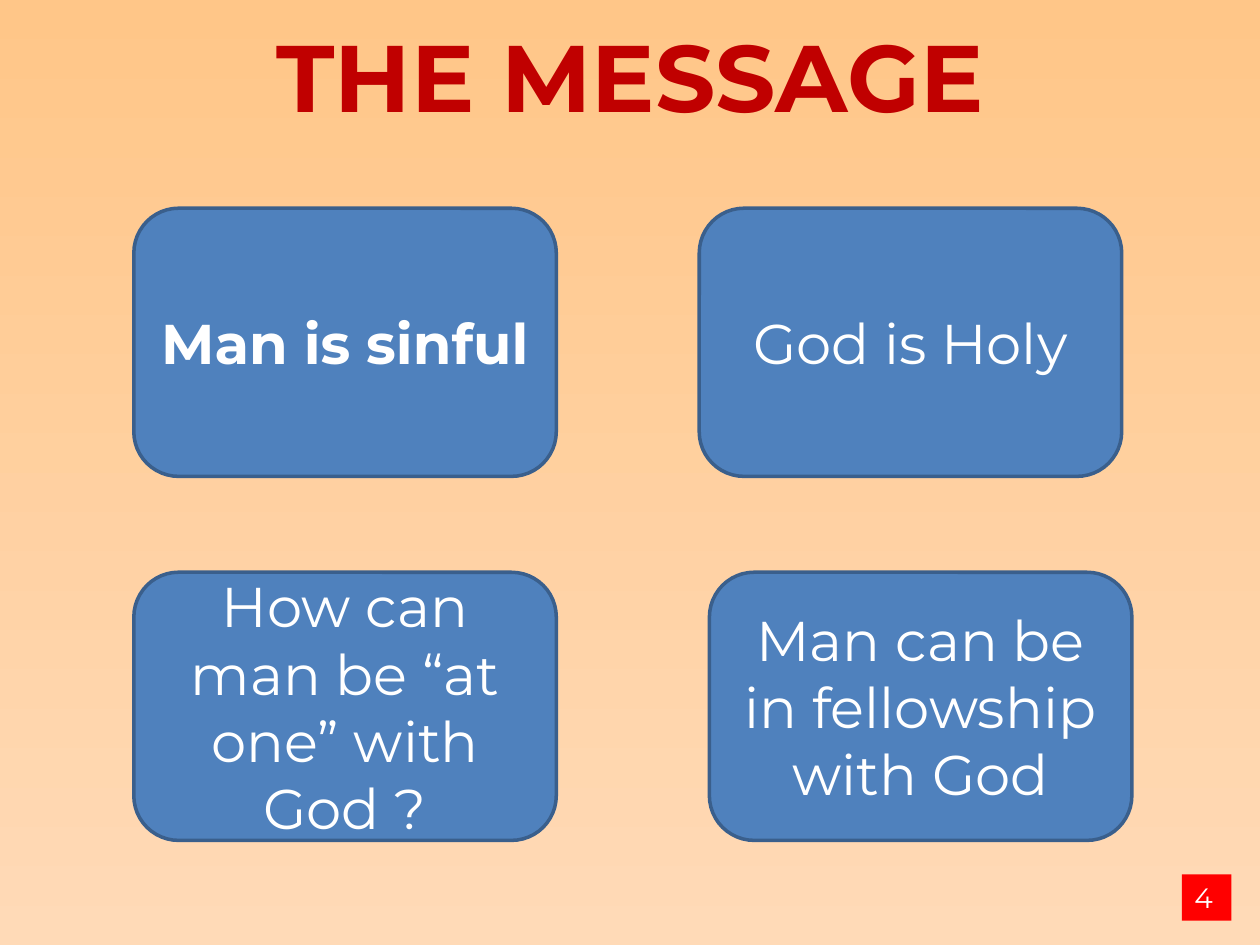
import pptx
import pptx.dml.color
import pptx.enum.shapes
import pptx.enum.text
import pptx.util

Pt = pptx.util.Pt
SHAPE = pptx.enum.shapes.MSO_SHAPE
ALIGN = pptx.enum.text.PP_ALIGN
ANCHOR = pptx.enum.text.MSO_ANCHOR

COLOURS = {
    "sky": "FFC688",
    "ground": "FFDAB7",
    "heading": "C00000",
    "card": "4F81BD",
    "card edge": "3A5F8C",
    "badge": "FF0000",
    "light": "FFFFFF",
}


class MessageSlide:
    font = "Montserrat"

    def __init__(self, slide):
        self.slide = slide

    def colour(self, name):
        return pptx.dml.color.RGBColor.from_string(COLOURS[name])

    def background(self, top, bottom):
        fill = self.slide.background.fill
        fill.gradient()
        fill.gradient_angle = 270
        for stop, name, position in zip(fill.gradient_stops, (top, bottom), (0, 1)):
            stop.color.rgb = self.colour(name)
            stop.position = position

    def add_words(self, holder, words, size, colour, bold=False,
                  align=ALIGN.CENTER, anchor=ANCHOR.MIDDLE):
        frame = holder.text_frame
        frame.word_wrap = True
        frame.vertical_anchor = anchor
        frame.text = words
        paragraph = frame.paragraphs[0]
        paragraph.alignment = align
        font = paragraph.runs[0].font
        font.name, font.size, font.bold = self.font, Pt(size), bold
        font.color.rgb = self.colour(colour)

    def title(self, words, box):
        heading = self.slide.shapes.add_textbox(*map(Pt, box))
        self.add_words(heading, words, 54, "heading", bold=True)

    def panel(self, kind, box, fill):
        panel = self.slide.shapes.add_shape(kind, *map(Pt, box))
        panel.shadow.inherit = False
        panel.fill.solid()
        panel.fill.fore_color.rgb = self.colour(fill)
        return panel

    def card(self, words, box, bold=False):
        card = self.panel(SHAPE.ROUNDED_RECTANGLE, box, "card")
        card.line.color.rgb = self.colour("card edge")
        card.line.width = Pt(2)
        self.add_words(card, words, 32, "light", bold)

    def page_badge(self, number, box):
        badge = self.panel(SHAPE.RECTANGLE, box, "badge")
        badge.line.fill.background()
        self.add_words(badge, number, 16, "light", align=ALIGN.LEFT, anchor=ANCHOR.TOP)


def main():
    deck = pptx.Presentation()
    deck.slide_width, deck.slide_height = Pt(720), Pt(540)
    message = MessageSlide(deck.slides.add_slide(deck.slide_layouts[6]))

    # Background, title and page number
    message.background("sky", "ground")
    message.title("THE MESSAGE", (0, 9.5, 720, 66))
    message.page_badge("4", (675.4, 499.6, 28.2, 26.6))

    # Four statements
    card_width, card_height = 241.4, 153.2
    upper, lower = 119, 327
    statements = [
        ("Man is sinful", 76.5, upper, True),
        ("God is Holy", 399.6, upper, False),
        ("How can man be “at one” with God ?", 76.5, lower, False),
        ("Man can be in fellowship with God", 405.4, lower, False),
    ]
    for words, left, top, bold in statements:
        message.card(words, (left, top, card_width, card_height), bold)

    deck.save("out.pptx")


if __name__ == "__main__":
    main()
